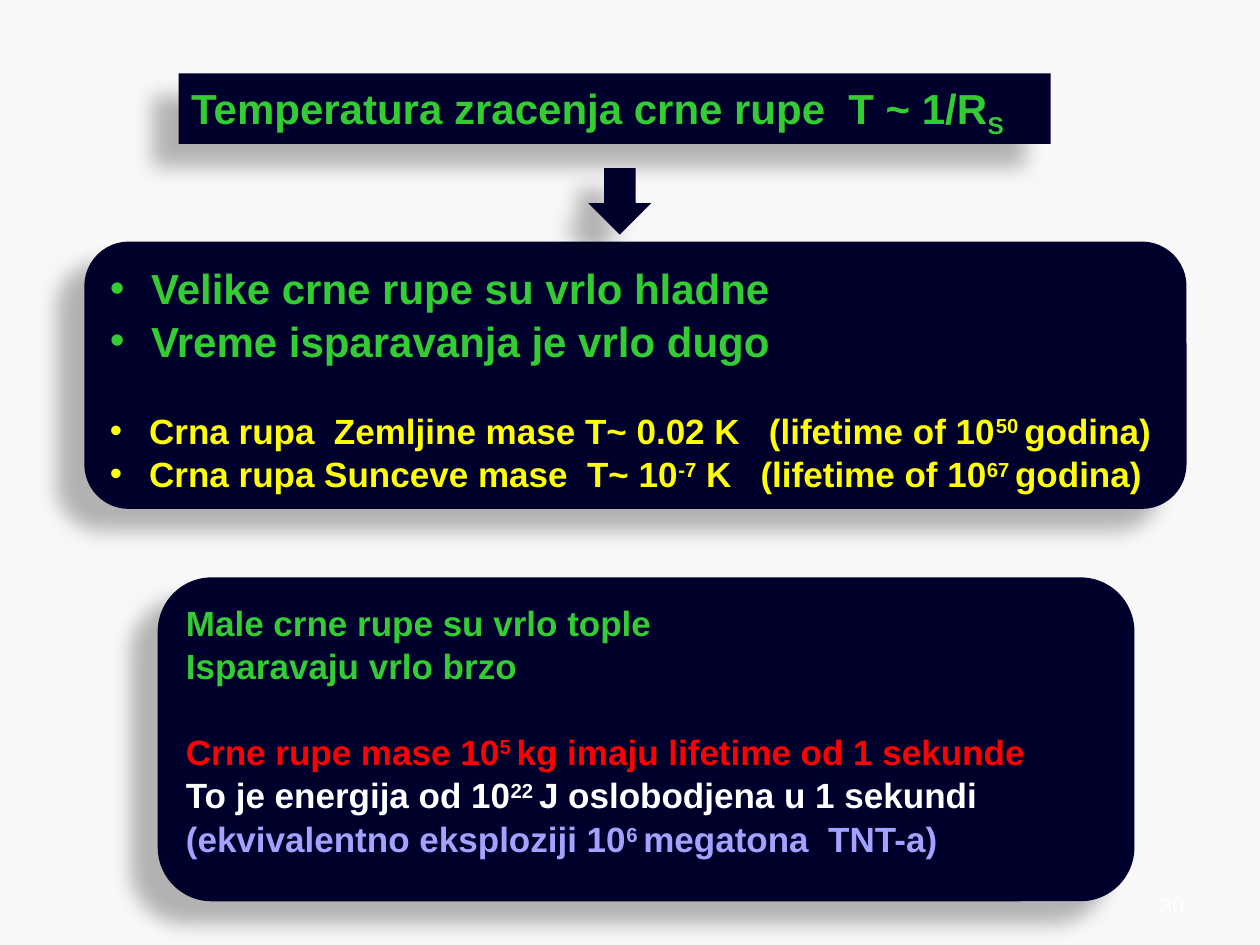
from lxml import etree
from pptx import Presentation, util as u
from pptx.dml.color import RGBColor
from pptx.enum import shapes, text
from pptx.oxml import parse_xml
from pptx.oxml.ns import nsdecls, qn

GREEN, YELLOW, NAVY = "33CC33", "FFFF00", "00002C"


def rgb(value):
    return RGBColor.from_string(value)


def write(sp, lines, size_bullets=False, base="30000"):
    tf = sp.text_frame
    tf.word_wrap = True
    tf.auto_size = text.MSO_AUTO_SIZE.NONE
    tf.vertical_anchor = text.MSO_ANCHOR.TOP
    for i, (line, size, color, before) in enumerate(lines):
        p = tf.paragraphs[0] if i == 0 else tf.add_paragraph()
        p.alignment = text.PP_ALIGN.LEFT
        p.line_spacing = 1.04
        p.space_before = u.Pt(before)
        if size_bullets:
            pPr = p._p.get_or_add_pPr()
            indent = u.Cm(0.83 if size == 24 else 0.79)
            pPr.set("marL", str(indent))
            pPr.set("indent", str(-indent))
            etree.SubElement(pPr, qn("a:buFont")).set("typeface", "Arial")
            etree.SubElement(pPr, qn("a:buChar")).set("char", "•")
        for j, part in enumerate(line.split("^")):
            r = p.add_run()
            r.text = part
            r.font.name, r.font.size, r.font.bold = "Arial", u.Pt(size), True
            r.font.color.rgb = rgb(color)
            if j % 2:
                r._r.get_or_add_rPr().set("baseline", base)


prs = Presentation()
prs.slide_width, prs.slide_height = u.Cm(25.4), u.Cm(19.05)
s = prs.slides.add_slide(prs.slide_layouts[1])
s.background.fill.solid()
s.background.fill.fore_color.rgb = rgb("F8F8F8")

title, body = s.placeholders[0], s.placeholders[1]
for sp, box in ((title, (3.6, 1.48, 17.58, 1.42)), (body, (1.7, 4.87, 22.22, 5.39))):
    sp.left, sp.top, sp.width, sp.height = [u.Cm(v) for v in box]
    sp._element.spPr.insert(1, parse_xml(
        f'<a:prstGeom {nsdecls("a")} prst="roundRect"><a:avLst/></a:prstGeom>'))

arrow = s.shapes.add_shape(shapes.MSO_SHAPE.DOWN_ARROW,
                           u.Cm(11.86), u.Cm(3.39), u.Cm(1.27), u.Cm(1.34))
small = s.shapes.add_shape(shapes.MSO_SHAPE.ROUNDED_RECTANGLE,
                           u.Cm(3.18), u.Cm(11.64), u.Cm(19.69), u.Cm(6.53))

for sp in (title, body, arrow, small):
    sp.fill.solid()
    sp.fill.fore_color.rgb = rgb(NAVY)
    sp.line.fill.background()
    sp.shadow.inherit = False
    sp._element.spPr.find(qn("a:effectLst")).append(parse_xml(
        f'<a:outerShdw {nsdecls("a")} blurRad="{u.Pt(11.8)}" dist="{u.Pt(19.7)}" '
        'dir="8460000" algn="ctr" rotWithShape="0"><a:srgbClr val="000000">'
        '<a:alpha val="28000"/></a:srgbClr></a:outerShdw>'))

write(title, [("Temperatura zracenja crne rupe  T ~ 1/R^S", 24, GREEN, 0)], base="-25000")
write(body, [
    ("Velike crne rupe su vrlo hladne", 24, GREEN, 0),
    ("Vreme isparavanja je vrlo dugo", 24, GREEN, 0),
    ("Crna rupa  Zemljine mase T~ 0.02 K   (lifetime of 10^50 ^godina)", 20, YELLOW, 24),
    ("Crna rupa Sunceve mase  T~ 10^-7^ K   (lifetime of 10^67 ^godina)", 20, YELLOW, 0),
], size_bullets=True)
write(small, [
    ("Male crne rupe su vrlo tople", 20, GREEN, 0),
    ("Isparavaju vrlo brzo", 20, GREEN, 0),
    ("Crne rupe mase 10^5 ^kg imaju lifetime od 1 sekunde", 20, "FF0000", 24),
    ("To je energija od 10^22 ^J oslobodjena u 1 sekundi", 20, "FFFFFF", 0),
    ("(ekvivalentno eksploziji 10^6 ^megatona  TNT-a)", 20, "A3A3FF", 0),
])

number = s.shapes.add_textbox(u.Cm(22.12), u.Cm(17.86), u.Cm(2), u.Cm(0.8))
number.text_frame.word_wrap = True
p = number.text_frame.paragraphs[0]
p.text = "30"
p.alignment = text.PP_ALIGN.RIGHT
r = p.runs[0]
r.font.name, r.font.size = "Arial", u.Pt(12)
r.font.color.rgb = rgb("FFFFFF")

prs.save("out.pptx")
